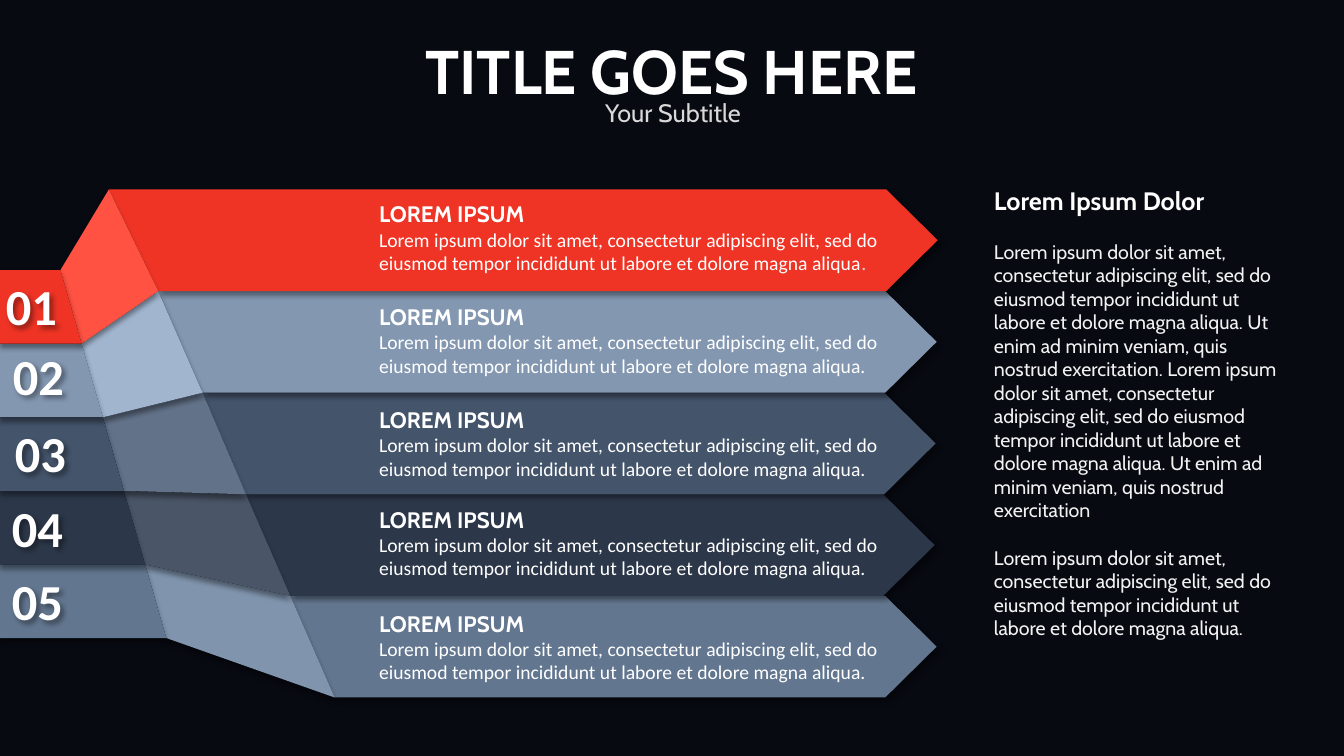
from lxml import etree
from pptx import Presentation
from pptx.dml.color import RGBColor
from pptx.enum.text import MSO_ANCHOR, MSO_AUTO_SIZE, PP_ALIGN
from pptx.oxml.ns import qn
from pptx.util import Inches, Pt

TOP = MSO_ANCHOR.TOP
NO_FIT = MSO_AUTO_SIZE.NONE
LEFT, CENTER = PP_ALIGN.LEFT, PP_ALIGN.CENTER
HEAD, BODY = "Cabin", "Calibri"
WHITE, PALE, GREY = "FFFFFF", "F2F2F2", "D9D9D9"

LOREM = ("Lorem ipsum dolor sit amet, consectetur adipiscing elit, sed do "
         "eiusmod tempor incididunt ut labore et dolore magna aliqua")
LONG = (f"{LOREM}. Ut enim ad minim veniam, quis nostrud exercitation. "
        f"{LOREM}. Ut enim ad minim veniam, quis nostrud exercitation")

# Per ribbon: band and tab colour, fold colour, arrow shoulder x,
# text top, number left and top
RIBBONS = [
    ("EF3425", "FF5243", 8.79, 1.99, -0.04, 2.68),
    ("8397B1", "A1B5CF", 8.78, 3.01, 0.03, 3.37),
    ("44546B", "627289", 8.77, 4.03, 0.05, 4.14),
    ("2C3749", "4A5567", 8.76, 5.02, 0.02, 4.88),
    ("62768F", "8094AD", 8.78, 6.05, 0.02, 5.61),
]
# Points where ribbons meet on the left crease and on the right crease
INNER = [(0.6 + 0.21 * i, 2.68 + 0.73 * i) for i in range(6)]
OUTER = list(zip([1.08, 1.57, 2.01, 2.44, 2.88, 3.32],
                 [1.88 + 5.04 * i / 5 for i in range(6)]))
TIP = 0.51


def color(text):
    return RGBColor.from_string(text)


class Deck:
    def __init__(self):
        self.prs = Presentation()
        self.prs.slide_width = Inches(13.33)
        self.prs.slide_height = Inches(7.5)
        self.slide = self.prs.slides.add_slide(self.prs.slide_layouts[0])
        fill = self.slide.background.fill
        fill.solid()
        fill.fore_color.rgb = color("080A12")

    def shade(self, shape, angle):
        """Soft black drop shadow."""
        shape.shadow.inherit = False
        effects = shape._element.spPr.find(qn("a:effectLst"))
        outer = etree.SubElement(
            effects, qn("a:outerShdw"), blurRad=str(Pt(4)), dist=str(Pt(3)),
            dir=str(angle * 60000), algn="t", rotWithShape="0")
        black = etree.SubElement(outer, qn("a:srgbClr"), val="000000")
        etree.SubElement(black, qn("a:alpha"), val="40000")

    def facet(self, points, fill, angle=90):
        """Closed outline with a shadow."""
        spots = [(Inches(x), Inches(y)) for x, y in points]
        pen = self.slide.shapes.build_freeform(*spots[0])
        pen.add_line_segments(spots[1:], close=True)
        shape = pen.convert_to_shape()
        shape.fill.solid()
        shape.fill.fore_color.rgb = color(fill)
        shape.line.fill.background()
        self.shade(shape, angle)

    def put(self, shape, paras, align=LEFT, gap=0):
        """Fill a shape; each paragraph is a list of (text, size, font, colour, bold)."""
        frame = shape.text_frame
        frame.word_wrap = True
        frame.auto_size = NO_FIT
        frame.vertical_anchor = TOP
        for i, runs in enumerate(paras):
            para = frame.paragraphs[0] if i == 0 else frame.add_paragraph()
            para.alignment = align
            para.space_before = Pt(gap if i else 0)
            for text, size, font, tint, bold in runs:
                run = para.add_run()
                run.text = text
                run.font.size = Pt(size)
                run.font.name = font
                run.font.bold = bold
                run.font.color.rgb = color(tint)

    def text(self, box, paras, gap=0, inset=True):
        shape = self.slide.shapes.add_textbox(*map(Inches, box))
        self.put(shape, paras, gap=gap)
        if not inset:
            frame = shape.text_frame
            frame.margin_left = frame.margin_right = 0
            frame.margin_top = frame.margin_bottom = 0
        return shape

    def holder(self, index, box, run):
        """Move and fill a template placeholder."""
        shape = self.slide.placeholders[index]
        shape.left, shape.top, shape.width, shape.height = map(Inches, box)
        self.put(shape, [[run]], CENTER)


def main():
    deck = Deck()

    # Title and subtitle
    deck.holder(0, (3.65, 0.28, 6.02, 0.84),
                ("TITLE GOES HERE", 44, HEAD, WHITE, True))
    deck.holder(1, (4.41, 0.92, 4.53, 0.4),
                ("Your Subtitle", 18, HEAD, GREY, False))

    # Folded ribbons, lowest first so that each upper one casts its shadow
    for i, (band, fold, edge, *_) in reversed(list(enumerate(RIBBONS))):
        (in_x, in_y), (in_x2, in_y2) = INNER[i:i + 2]
        (out_x, out_y), (out_x2, out_y2) = OUTER[i:i + 2]
        deck.facet([(out_x, out_y), (edge, out_y),
                    (edge + TIP, (out_y + out_y2) / 2),
                    (edge, out_y2), (out_x2, out_y2)], band, 45)
        deck.facet([INNER[i], OUTER[i], OUTER[i + 1], INNER[i + 1]], fold)
        deck.facet([(0, in_y), (in_x, in_y), (in_x2, in_y2), (0, in_y2)], band)

    # Ribbon text and numbers
    for i, (_, _, _, top, num_x, num_y) in enumerate(RIBBONS):
        dot = WHITE if i else GREY
        deck.text((3.76, top, 5.37, 0.74),
                  [[("LOREM IPSUM", 16, HEAD, WHITE, True)],
                   [(LOREM, 14, BODY, WHITE, False), (".", 14, BODY, dot, False)]],
                  inset=False)
        num = deck.text((num_x, num_y, 0.86, 0.71),
                        [[(f"{i + 1:02}", 36, BODY, WHITE, True)]])
        deck.shade(num, 45)

    # Side column
    deck.text((9.76, 1.79, 3.17, 4.41),
              [[("Lorem Ipsum Dolor", 18, HEAD, WHITE, True)],
               [(LONG, 14, HEAD, PALE, False)],
               [(LOREM + ".", 14, HEAD, PALE, False)]], gap=17)

    deck.prs.save("out.pptx")


if __name__ == "__main__":
    main()
